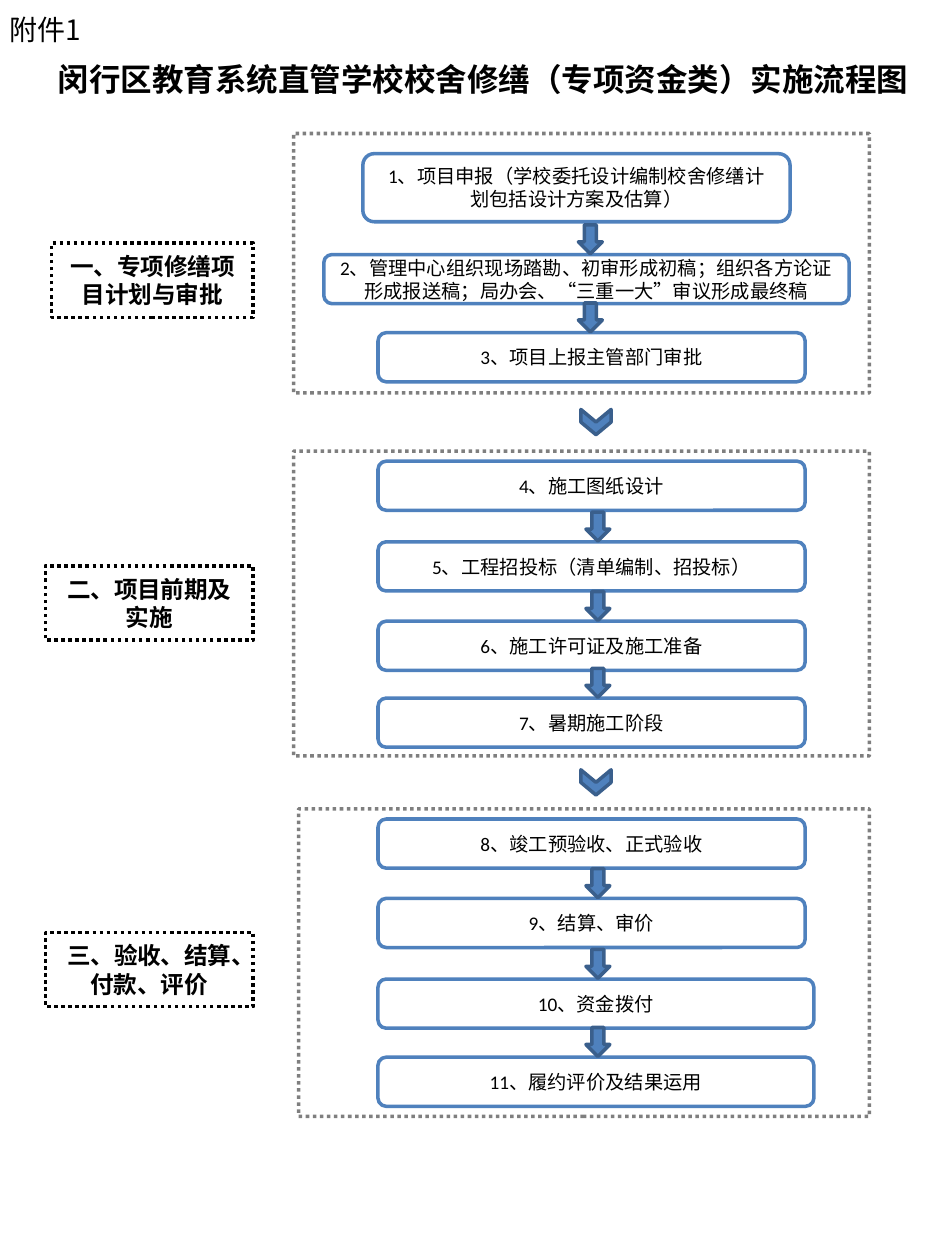
from dataclasses import dataclass

from lxml import etree
from pptx import Presentation
from pptx.dml.color import RGBColor
from pptx.enum.dml import MSO_LINE
from pptx.enum.lang import MSO_LANGUAGE_ID
from pptx.enum.shapes import MSO_SHAPE
from pptx.enum.text import MSO_ANCHOR, MSO_AUTO_SIZE, PP_ALIGN
from pptx.oxml.ns import qn
from pptx.util import Inches, Pt

RECTANGLE, ROUNDED = MSO_SHAPE.RECTANGLE, MSO_SHAPE.ROUNDED_RECTANGLE
DOWN_ARROW, CHEVRON = MSO_SHAPE.DOWN_ARROW, MSO_SHAPE.CHEVRON
DOTTED = MSO_LINE.ROUND_DOT
LEFT, CENTER = PP_ALIGN.LEFT, PP_ALIGN.CENTER
TOP, MIDDLE = MSO_ANCHOR.TOP, MSO_ANCHOR.MIDDLE
GROW = MSO_AUTO_SIZE.SHAPE_TO_FIT_TEXT
CHINESE = MSO_LANGUAGE_ID.SIMPLIFIED_CHINESE

COLUMNS, ROWS = 75, 100  # square grid cells
CELL = Inches(0.1)
PANEL_RIGHT = 69
STEP_LEFT, STEP_WIDTH, STEP_HEIGHT = 30, 33.9, 3.9
ARROW_WIDTH, ARROW_HEIGHT = 1.9, 2.3


@dataclass(frozen=True)
class Theme:
    latin: str = "Calibri"
    chinese: str = "Noto Sans CJK SC"
    paper: RGBColor = RGBColor(0xFF, 0xFF, 0xFF)
    ink: RGBColor = RGBColor(0, 0, 0)
    blue: RGBColor = RGBColor(0x4F, 0x81, 0xBD)
    dark_blue: RGBColor = RGBColor(0x3A, 0x5F, 0x8C)
    title_size: float = 18
    note_size: float = 16
    stage_size: float = 13.5
    step_size: float = 11
    line_width: float = 2


THEME = Theme()


@dataclass(frozen=True)
class Step:
    text: str
    top: float
    left: float = STEP_LEFT
    width: float = STEP_WIDTH
    height: float = STEP_HEIGHT


@dataclass(frozen=True)
class Stage:
    """A dotted panel of steps; label and panel are grid positions."""
    text: str
    label: tuple
    panel: tuple
    arrow_left: float
    steps: tuple


STAGES = (
    Stage("一、专项修缮项目计划与审批", (4.1, 19.3), (23.3, 10.6, 20.6), 45.9, (
        Step("1、项目申报（学校委托设计编制校舍修缮计划包括设计方案及估算）",
             12.2, left=28.8, height=5.4),
        Step("2、管理中心组织现场踏勘、初审形成初稿；组织各方论证形成报送稿；"
             "局办会、“三重一大”审议形成最终稿", 20.2, left=25.7, width=41.7),
        Step("3、项目上报主管部门审批", 26.4),
    )),
    Stage("二、项目前期及实施", (3.6, 44.9), (23.3, 35.8, 24.2), 46.5, (
        Step("4、施工图纸设计", 36.6),
        Step("5、工程招投标（清单编制、招投标）", 43),
        Step("6、施工许可证及施工准备", 49.3),
        Step("7、暑期施工阶段", 55.4),
    )),
    Stage("三、验收、结算、付款、评价", (3.6, 74), (23.7, 64.2, 24.4), 46.5, (
        Step("8、竣工预验收、正式验收", 65),
        Step("9、结算、审价", 71.3),
        Step("10、资金拨付", 77.7, width=34.6),
        Step("11、履约评价及结果运用", 83.9, width=34.6),
    )),
)


def cells(*values):
    return [round(value * CELL) for value in values]


def write(shape, text, size, font=THEME.latin, bold=False, align=CENTER, anchor=MIDDLE):
    frame = shape.text_frame
    frame.word_wrap = True
    frame.vertical_anchor = anchor
    paragraph = frame.paragraphs[0]
    paragraph.alignment = align
    run = paragraph.add_run()
    run.text = text
    run.font.name = font
    run.font.size = Pt(size)
    run.font.bold = bold
    run.font.color.rgb = THEME.ink
    run.font.language_id = CHINESE
    etree.SubElement(run.font._element, qn("a:ea"), typeface=THEME.chinese)


def add_box(slide, kind, place, fill, line, dash=None):
    shape = slide.shapes.add_shape(kind, *cells(*place))
    shape.shadow.inherit = False
    shape.fill.solid()
    shape.fill.fore_color.rgb = fill
    shape.line.color.rgb = line
    shape.line.width = Pt(THEME.line_width)
    if dash:
        shape.line.dash_style = dash
    return shape


def add_panel(slide, left, top, height):
    place = (left, top, PANEL_RIGHT - left, height)
    panel = add_box(slide, RECTANGLE, place, THEME.paper, THEME.ink, DOTTED)
    color = panel.line._ln.find(".//" + qn("a:srgbClr"))
    etree.SubElement(color, qn("a:alpha"), val="50000")


def add_label(slide, text, left, top):
    place = (left, top, 20.1 - left, 5.9)
    label = add_box(slide, RECTANGLE, place, THEME.paper, THEME.ink, DOTTED)
    write(label, text, THEME.stage_size, bold=True)


def add_step(slide, step):
    place = (step.left, step.top, step.width, step.height)
    write(add_box(slide, ROUNDED, place, THEME.paper, THEME.blue),
          step.text, THEME.step_size)


def add_stage(slide, stage):
    add_panel(slide, *stage.panel)
    add_label(slide, stage.text, *stage.label)
    for step in stage.steps:
        add_step(slide, step)
    for step in stage.steps[1:]:
        place = (stage.arrow_left, step.top - ARROW_HEIGHT - 0.05,
                 ARROW_WIDTH, ARROW_HEIGHT)
        add_box(slide, DOWN_ARROW, place, THEME.blue, THEME.dark_blue)


def add_chevron(slide, upper, lower):
    """Point from one stage down to the next, midway between their panels."""
    upper_bottom = upper.panel[1] + upper.panel[2]
    middle = (upper_bottom + lower.panel[1]) / 2
    place = (46.3, middle - 1.2, 2, 2.4)
    add_box(slide, CHEVRON, place, THEME.blue, THEME.dark_blue).rotation = 90


def add_heading(slide):
    title = slide.shapes.title
    title.left, title.top, title.width, title.height = cells(3.6, 4.3, 70.9, 4)
    title.text_frame.auto_size = GROW
    write(title, "闵行区教育系统直管学校校舍修缮（专项资金类）实施流程图",
          THEME.title_size, bold=True, align=LEFT, anchor=TOP)
    note = slide.shapes.add_textbox(*cells(-0.2, 0.5, 9.8, 3.7))
    note.text_frame.auto_size = GROW
    write(note, "附件1", THEME.note_size, font=THEME.chinese, align=LEFT, anchor=TOP)


def main():
    presentation = Presentation()
    presentation.slide_width, presentation.slide_height = cells(COLUMNS, ROWS)
    slide = presentation.slides.add_slide(presentation.slide_layouts[5])
    slide.background.fill.solid()
    slide.background.fill.fore_color.rgb = THEME.paper
    add_heading(slide)
    for stage in STAGES:
        add_stage(slide, stage)
    for upper, lower in zip(STAGES, STAGES[1:]):
        add_chevron(slide, upper, lower)
    presentation.save("out.pptx")


if __name__ == "__main__":
    main()
